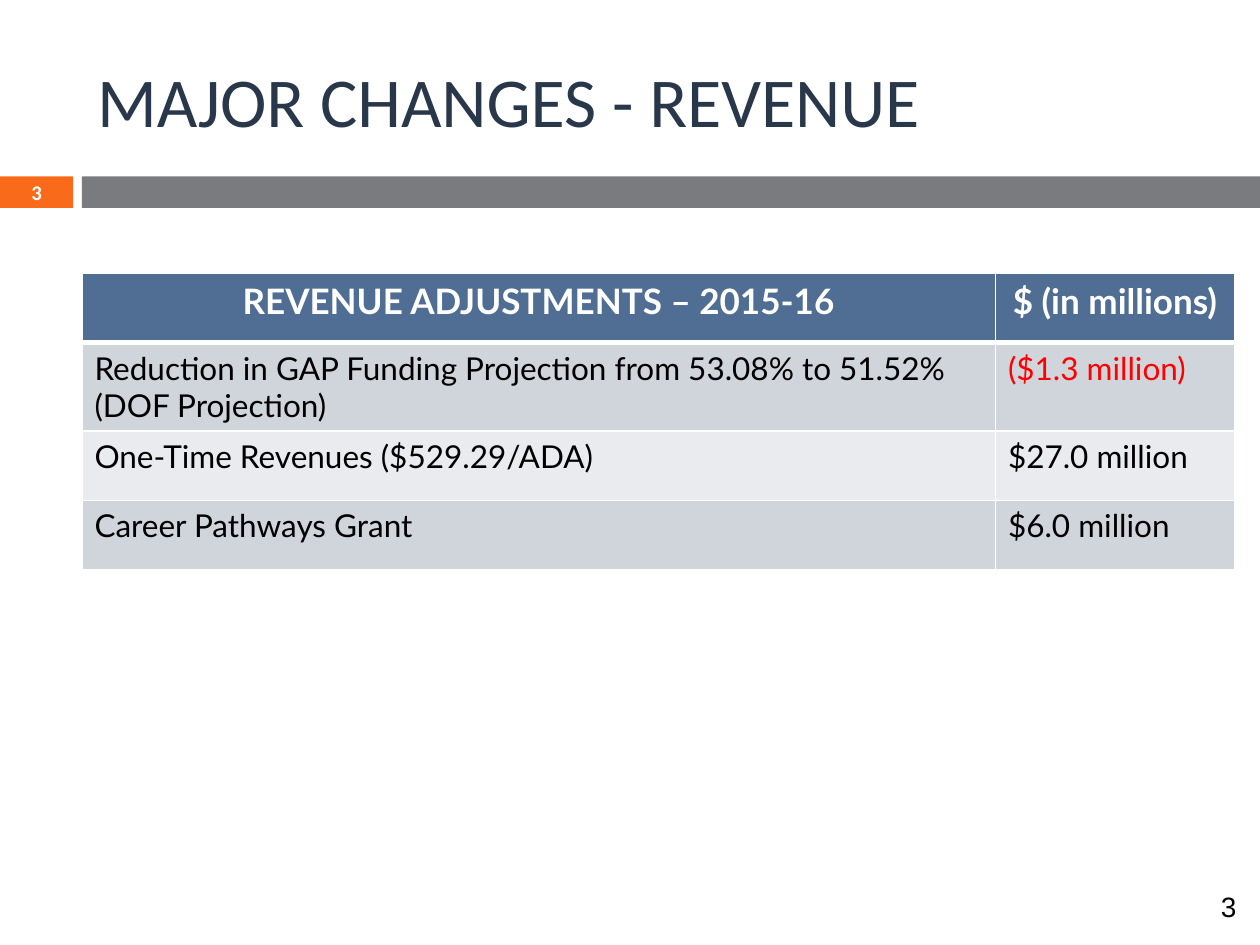
from dataclasses import dataclass
from typing import Any

from lxml import etree
from pptx import Presentation
from pptx import util as u
from pptx.dml import color
from pptx.enum import shapes, text
from pptx.oxml import ns

EMU_PER_PX = 9144
COLORS = {
    "title": "28374A",
    "orange": "F96A1B",
    "gray": "797B7E",
    "header": "506E94",
    "odd": "D0D5DC",
    "even": "E9EBEE",
    "white": "FFFFFF",
    "black": "000000",
    "red": "FF0000",
}
LEFT = text.PP_ALIGN.LEFT
CENTER = text.PP_ALIGN.CENTER


@dataclass(frozen=True)
class Box:
    left: int
    top: int
    width: int
    height: int

    def emu(self) -> tuple[int, ...]:
        return tuple(px(n) for n in (self.left, self.top, self.width, self.height))


@dataclass(frozen=True)
class Style:
    size: float
    name: str
    color: str
    bold: bool = False
    align: Any = LEFT


@dataclass(frozen=True)
class Adjustment:
    item: str
    amount: str
    amount_color: str = "black"


COLUMN_WIDTHS = (725, 190)
ROW_HEIGHT = 55
HEADINGS = ("REVENUE ADJUSTMENTS – 2015-16", "$ (in millions)")
ADJUSTMENTS = (
    Adjustment(
        "Reduction in GAP Funding Projection from 53.08% to 51.52% (DOF Projection)",
        "($1.3 million)",
        "red",
    ),
    Adjustment("One-Time Revenues ($529.29/ADA)", "$27.0 million"),
    Adjustment("Career Pathways Grant", "$6.0 million"),
)
BARS = ((Box(0, 140, 58, 25), "orange"), (Box(65, 140, 935, 25), "gray"))


def px(length: int) -> int:
    return u.Emu(length * EMU_PER_PX)


def rgb(name: str) -> color.RGBColor:
    return color.RGBColor.from_string(COLORS[name])


def write(frame: Any, words: str, style: Style) -> None:
    frame.text = words
    paragraph = frame.paragraphs[0]
    paragraph.alignment = style.align
    font = paragraph.runs[0].font
    values = {"size": u.Pt(style.size), "name": style.name, "bold": style.bold}
    for key, value in values.items():
        setattr(font, key, value)
    font.color.rgb = rgb(style.color)


def format_frame(frame: Any, **values: Any) -> None:
    for key, value in values.items():
        setattr(frame, key, value)


def add_bar(slide: Any, box: Box, fill: str) -> None:
    bar = slide.shapes.add_shape(shapes.MSO_SHAPE.RECTANGLE, *box.emu())
    bar.shadow.inherit = False
    bar.fill.solid()
    bar.fill.fore_color.rgb = rgb(fill)
    bar.line.fill.background()


def add_title(slide: Any, box: Box, words: str) -> None:
    title = slide.shapes.title
    for key, value in zip(("left", "top", "width", "height"), box.emu()):
        setattr(title, key, value)
    write(title.text_frame, words, Style(40, "Calibri", "title"))
    format_frame(
        title.text_frame,
        vertical_anchor=text.MSO_ANCHOR.MIDDLE,
        auto_size=text.MSO_AUTO_SIZE.NONE,
        word_wrap=True,
    )


def add_label(slide: Any, box: Box, words: str, style: Style, **values: Any) -> None:
    label = slide.shapes.add_textbox(*box.emu())
    write(label.text_frame, words, style)
    format_frame(label.text_frame, **values)


def add_borders(cell: Any, bottom: int) -> None:
    properties = cell._tc.get_or_add_tcPr()
    for index, side in enumerate(("lnL", "lnR", "lnT", "lnB")):
        width = bottom if side == "lnB" else 1
        line = etree.Element(ns.qn(f"a:{side}"), w=str(u.Pt(width)))
        fill = etree.SubElement(line, ns.qn("a:solidFill"))
        etree.SubElement(fill, ns.qn("a:srgbClr"), val=COLORS["white"])
        properties.insert(index, line)


def fill_cell(cell: Any, words: str, style: Style, fill: str, bottom: int = 1) -> None:
    write(cell.text_frame, words, style)
    cell.fill.solid()
    cell.fill.fore_color.rgb = rgb(fill)
    add_borders(cell, bottom)


def add_revenue_table(slide: Any, left: int, top: int) -> None:
    row_count = len(ADJUSTMENTS) + 1
    box = Box(left, top, sum(COLUMN_WIDTHS), ROW_HEIGHT * row_count)
    table = slide.shapes.add_table(row_count, len(COLUMN_WIDTHS), *box.emu()).table
    for column, width in zip(table.columns, COLUMN_WIDTHS):
        column.width = px(width)
    heading_style = Style(20, "Lato", "white", True, CENTER)
    for index, heading in enumerate(HEADINGS):
        fill_cell(table.cell(0, index), heading, heading_style, "header", 3)
    for row, adjustment in enumerate(ADJUSTMENTS, 1):
        fill = "odd" if row % 2 else "even"
        fill_cell(table.cell(row, 0), adjustment.item, Style(18, "Lato", "black"), fill)
        amount_style = Style(18, "Lato", adjustment.amount_color)
        fill_cell(table.cell(row, 1), adjustment.amount, amount_style, fill)


def main() -> None:
    presentation = Presentation()
    presentation.slide_width = px(1000)
    presentation.slide_height = px(750)
    slide = presentation.slides.add_slide(presentation.slide_layouts[5])
    for box, fill in BARS:
        add_bar(slide, box, fill)
    add_title(slide, Box(67, 25, 892, 108), "MAJOR CHANGES - REVENUE")
    add_label(
        slide,
        Box(0, 139, 58, 27),
        "3",
        Style(11.9, "Calibri", "white", True, CENTER),
        vertical_anchor=text.MSO_ANCHOR.MIDDLE,
        word_wrap=True,
        margin_top=0,
        margin_bottom=0,
    )
    add_revenue_table(slide, 65, 217)
    add_label(
        slide,
        Box(959, 701, 42, 37),
        "3",
        Style(16, "Arial", "black"),
        word_wrap=True,
        auto_size=text.MSO_AUTO_SIZE.SHAPE_TO_FIT_TEXT,
    )
    presentation.save("out.pptx")


if __name__ == "__main__":
    main()
